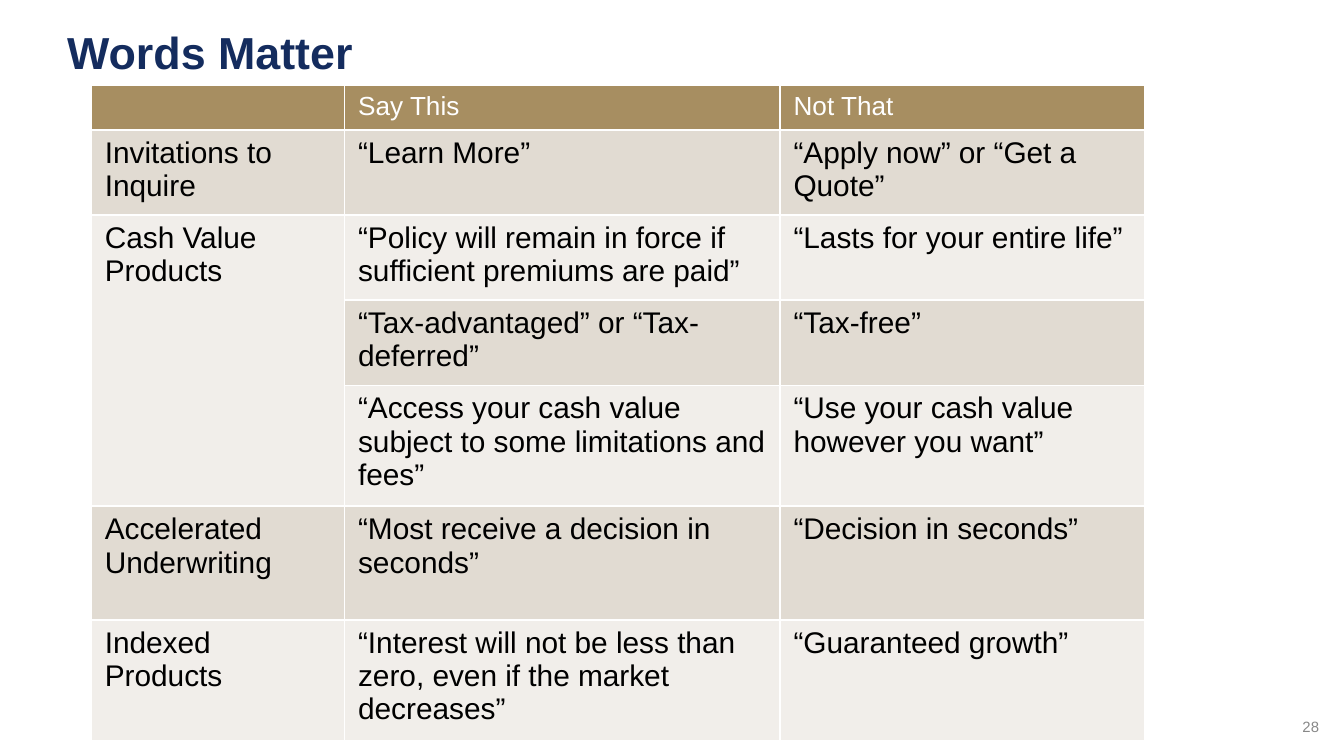
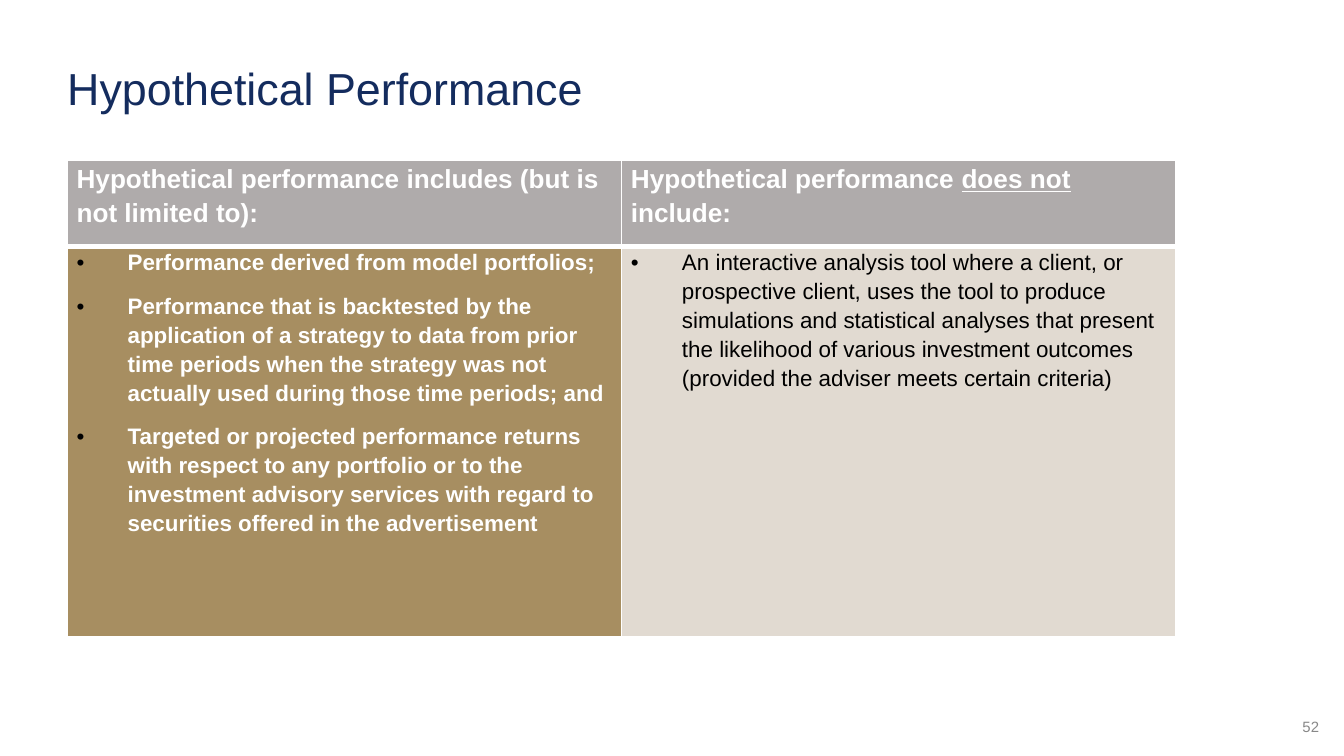
import lxml.etree
import pptx
import pptx.dml.color
import pptx.enum.text
import pptx.oxml.ns
import pptx.util
from dataclasses import dataclass


@dataclass(frozen=True)
class Theme:
    font: str = "Arial"
    navy: str = "142C5E"
    gold: str = "A78E61"
    gray: str = "AFABAB"
    sand: str = "E1DBD2"
    beige: str = "E1DAD1"
    cream: str = "F1EEEA"
    white: str = "FFFFFF"
    black: str = "000000"
    footer: str = "888888"
    title_size: int = 24
    header_size: int = 14
    large_size: int = 16
    body_size: int = 12
    footer_size: int = 8


theme = Theme()
presentation = pptx.Presentation()
presentation.slide_width = pptx.util.Inches(10)
presentation.slide_height = presentation.slide_width * 9 // 16
column = presentation.slide_width / 100
row = presentation.slide_height / 100


def add_element(parent, tag, **attributes):
    return lxml.etree.SubElement(parent, pptx.oxml.ns.qn(tag), attributes)


def write_text(frame, text, size, color, bold=False, underlined="", align=None,
               line_spacing=None, space_after=None, bullet=False):
    frame.word_wrap = True
    for index, line in enumerate(text.split("\n")):
        paragraph = frame.add_paragraph() if index else frame.paragraphs[0]
        if bullet:
            properties = paragraph._p.get_or_add_pPr()
            indent = pptx.util.Inches(0.38)
            properties.set("marL", str(indent))
            properties.set("indent", str(-indent))
            bullet_color = add_element(properties, "a:buClr")
            add_element(bullet_color, "a:srgbClr", val=theme.black)
            add_element(properties, "a:buFont", typeface=theme.font)
            add_element(properties, "a:buChar", char="•")
        paragraph.alignment = align
        paragraph.line_spacing = line_spacing
        if space_after:
            paragraph.space_after = pptx.util.Pt(space_after)
        if not line:
            add_element(paragraph._p, "a:endParaRPr", sz=str(size * 100))
        pieces = line.partition(underlined) if underlined else [line]
        for piece in filter(None, pieces):
            run = paragraph.add_run()
            run.text = piece
            run.font.name = theme.font
            run.font.size = pptx.util.Pt(size)
            run.font.bold = bold
            run.font.underline = True if piece == underlined else None
            run.font.color.rgb = pptx.dml.color.RGBColor.from_string(color)


words_header = dict(size=theme.header_size, color=theme.white)
words_body = dict(size=theme.large_size, color=theme.black)
performance_cell = dict(color=theme.white, bold=True, line_spacing=1.15, space_after=8)
performance_header = dict(performance_cell, size=theme.header_size, underlined="does not ")
performance_body = dict(performance_cell, size=theme.body_size, bullet=True)
performance_plain = dict(performance_body, color=theme.black, bold=False)

pages = [
    dict(
        title="Words Matter", number="28", bold=True,
        title_place=(5, 4.1, 90, 8.7), table_origin=(6.8, 11.25),
        column_widths=[18.85, 32.4, 27.15],
        row_heights=[5.9] + [10.65] * 3 + [15.05] * 3,
        header_rule=1, margins=(0.1, 0.05), merge=((2, 0), (4, 0)),
        fills=[[theme.gold] * 3] + [[theme.sand] * 3, [theme.cream] * 3] * 3,
        formats=[[words_header] * 3] + [[words_body] * 3] * 6,
        cells=[
            ["", "Say This", "Not That"],
            ["Invitations to Inquire", "“Learn More”", "“Apply now” or “Get a Quote”"],
            ["Cash Value Products",
             "“Policy will remain in force if sufficient premiums are paid”",
             "“Lasts for your entire life”"],
            [None, "“Tax-advantaged” or “Tax-deferred”", "“Tax-free”"],
            [None, "“Access your cash value subject to some limitations and fees”",
             "“Use your cash value however you want”"],
            ["Accelerated Underwriting", "“Most receive a decision in seconds”",
             "“Decision in seconds”"],
            ["Indexed Products",
             "“Interest will not be less than zero, even if the market decreases”",
             "“Guaranteed growth”"],
        ],
    ),
    dict(
        title="Hypothetical Performance", number="52", bold=False,
        title_place=(5, 8.9, 82.5, 8.9), table_origin=(5, 21.2),
        column_widths=[41.25] * 2, row_heights=[11.45, 51.65],
        header_rule=3, margins=(0.07, 0), merge=None,
        fills=[[theme.gray] * 2, [theme.gold, theme.beige]],
        formats=[[performance_header] * 2, [performance_body, performance_plain]],
        cells=[
            ["Hypothetical performance includes (but is not limited to):",
             "Hypothetical performance does not include:"],
            ["Performance derived from model portfolios;\n"
             "Performance that is backtested by the application of a strategy to data from "
             "prior time periods when the strategy was not actually used during those time "
             "periods; and\n"
             "Targeted or projected performance returns with respect to any portfolio or to "
             "the investment advisory services with regard to securities offered in the "
             "advertisement",
             "An interactive analysis tool where a client, or prospective client, uses the "
             "tool to produce simulations and statistical analyses that present the "
             "likelihood of various investment outcomes (provided the adviser meets certain "
             "criteria)"],
        ],
    ),
]

for page in pages:
    slide = presentation.slides.add_slide(presentation.slide_layouts[6])

    title_format = dict(size=theme.title_size, color=theme.navy, bold=page["bold"],
                        line_spacing=0.9)
    footer_format = dict(size=theme.footer_size, color=theme.footer,
                         align=pptx.enum.text.PP_ALIGN.RIGHT)
    for text, place, anchor, text_format in (
            (page["title"], page["title_place"], pptx.enum.text.MSO_ANCHOR.TOP, title_format),
            (page["number"], (95, 94.4, 3.15, 3.4), pptx.enum.text.MSO_ANCHOR.MIDDLE,
             footer_format)):
        left, top, width, height = place
        shape = slide.shapes.add_textbox(
            int(left * column), int(top * row), int(width * column), int(height * row))
        frame = shape.text_frame
        frame.margin_left = frame.margin_right = frame.margin_top = frame.margin_bottom = 0
        frame.vertical_anchor = anchor
        write_text(frame, text, **text_format)

    left, top = page["table_origin"]
    widths, heights = page["column_widths"], page["row_heights"]
    table = slide.shapes.add_table(
        len(heights), len(widths), int(left * column), int(top * row),
        int(sum(widths) * column), int(sum(heights) * row)).table
    table.horz_banding = False
    for table_column, width in zip(table.columns, widths):
        table_column.width = int(width * column)
    for table_row, height in zip(table.rows, heights):
        table_row.height = int(height * row)
    if page["merge"]:
        first, last = page["merge"]
        table.cell(*first).merge(table.cell(*last))

    for row_index, texts in enumerate(page["cells"]):
        for column_index, text in enumerate(texts):
            cell = table.cell(row_index, column_index)
            rules = dict(lnL=1, lnR=1,
                         lnT=page["header_rule"] if row_index == 1 else 1,
                         lnB=page["header_rule"] if row_index == 0 else 1)
            properties = cell._tc.get_or_add_tcPr()
            for edge, points in rules.items():
                border = add_element(properties, f"a:{edge}", w=str(pptx.util.Pt(points)))
                border_fill = add_element(border, "a:solidFill")
                add_element(border_fill, "a:srgbClr", val=theme.white)
            cell.fill.solid()
            cell.fill.fore_color.rgb = pptx.dml.color.RGBColor.from_string(
                page["fills"][row_index][column_index])
            side, edge_margin = (pptx.util.Inches(margin) for margin in page["margins"])
            cell.margin_left = cell.margin_right = side
            cell.margin_top = cell.margin_bottom = edge_margin
            if text is not None:
                write_text(cell.text_frame, text, **page["formats"][row_index][column_index])

presentation.save("out.pptx")
